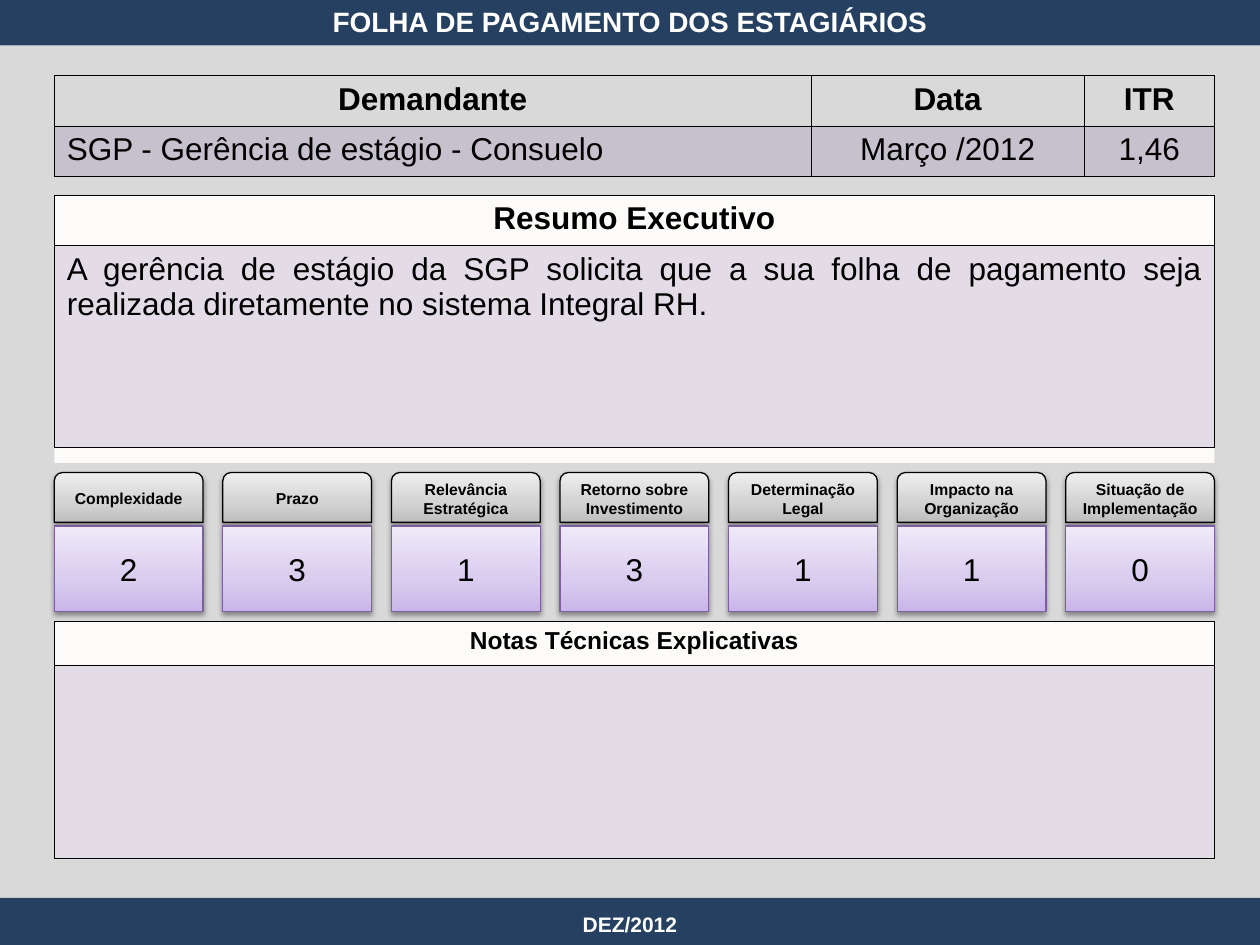
from dataclasses import dataclass
from lxml.etree import SubElement
from pptx import Presentation
from pptx.dml.color import RGBColor
from pptx.enum.shapes import MSO_SHAPE
from pptx.enum.text import MSO_ANCHOR, PP_ALIGN
from pptx.oxml import parse_xml
from pptx.oxml.ns import nsdecls, qn
from pptx.util import Pt


@dataclass(frozen=True)
class Theme:
    font: str = "Arial"
    ink: str = "000000"
    light: str = "FFFFFF"
    backdrop: str = "D9D9D9"
    band: str = "254061"
    panel: str = "FCFBF9"
    tint: str = "8064A2"
    tint_opacity: int = 20
    score_line: str = "7D60A0"
    label_fade: tuple = ((0, "BDBDBD"), (35, "D1D1D1"), (100, "EEEEEE"))
    score_fade: tuple = ((0, "C9B5E8"), (35, "D8CBEE"), (100, "F0EAF9"))
    title_size: int = 16
    footer_size: int = 12
    body_size: int = 18
    subhead_size: int = 14
    label_size: int = 9


THEME = Theme()
CENTER, LEFT, JUSTIFY = PP_ALIGN.CENTER, PP_ALIGN.LEFT, PP_ALIGN.JUSTIFY

TITLE = "FOLHA DE PAGAMENTO DOS ESTAGIÁRIOS"
FOOTER = "DEZ/2012"
REQUEST = [
    ["Demandante", "Data", "ITR"],
    ["SGP - Gerência de estágio - Consuelo", "Março /2012", "1,46"],
]
SUMMARY = [
    ["Resumo Executivo"],
    ["A gerência de estágio da SGP solicita que a sua folha de pagamento seja "
     "realizada diretamente no sistema Integral RH."],
]
REMARKS = [["Notas Técnicas Explicativas"], [""]]
SCORES = [
    ("Complexidade", "2"),
    ("Prazo", "3"),
    ("Relevância Estratégica", "1"),
    ("Retorno sobre Investimento", "3"),
    ("Determinação Legal", "1"),
    ("Impacto na Organização", "1"),
    ("Situação de Implementação", "0"),
]

PAGE_WIDTH, PAGE_HEIGHT = 720, 540
MARGIN, CONTENT_WIDTH = 31, 663
CARD_WIDTH = 85
CARD_STEP = (CONTENT_WIDTH - CARD_WIDTH) / (len(SCORES) - 1)


def add_shadow(parent):
    effects = parse_xml(
        f'<a:effectLst {nsdecls("a")}>'
        '<a:outerShdw blurRad="39370" dist="20320" dir="5400000" rotWithShape="0">'
        f'<a:srgbClr val="{THEME.ink}"><a:alpha val="38000"/></a:srgbClr>'
        '</a:outerShdw></a:effectLst>')
    parent.append(effects)


def write(frame, text, size=THEME.body_size, color=THEME.ink, bold=False,
          align=CENTER, shadow=False):
    frame.word_wrap = True
    para = frame.paragraphs[0]
    para.alignment = align
    if not text:
        return
    span = para.add_run()
    span.text = text
    span.font.size = Pt(size)
    span.font.bold = bold
    span.font.color.rgb = RGBColor.from_string(color)
    if shadow:
        add_shadow(span._r.get_or_add_rPr())
    span.font.name = THEME.font


def add_block(page, top, height, color, left=0, width=PAGE_WIDTH):
    block = page.shapes.add_shape(
        MSO_SHAPE.RECTANGLE, Pt(left), Pt(top), Pt(width), Pt(height))
    block.shadow.inherit = False
    block.fill.solid()
    block.fill.fore_color.rgb = RGBColor.from_string(color)
    block.line.fill.background()


def add_caption(page, text, top, height, size):
    box = page.shapes.add_textbox(Pt(0), Pt(top), Pt(PAGE_WIDTH), Pt(height))
    box.text_frame.vertical_anchor = MSO_ANCHOR.MIDDLE
    write(box.text_frame, text, size=size, color=THEME.light, bold=True, shadow=True)


def add_card(page, preset, left, top, height, fade, line, text, **text_format):
    card = page.shapes.add_shape(
        preset, Pt(left), Pt(top), Pt(CARD_WIDTH), Pt(height))
    card.line.color.rgb = RGBColor.from_string(line)
    card.line.width = Pt(0.75)
    stops = "".join(
        f'<a:gs pos="{position * 1000}"><a:srgbClr val="{color}"/></a:gs>'
        for position, color in fade)
    properties = card.element.spPr
    properties.find(qn("a:prstGeom")).addnext(parse_xml(
        f'<a:gradFill {nsdecls("a")} rotWithShape="1"><a:gsLst>{stops}</a:gsLst>'
        '<a:lin ang="16200000" scaled="0"/></a:gradFill>'))
    add_shadow(properties)
    card.text_frame.vertical_anchor = MSO_ANCHOR.MIDDLE
    write(card.text_frame, text, **text_format)


def style_cell(cell, tinted):
    properties = cell._tc.get_or_add_tcPr()
    if tinted:
        cell.fill.solid()
        cell.fill.fore_color.rgb = RGBColor.from_string(THEME.tint)
        color = properties.find(qn("a:solidFill")).find(qn("a:srgbClr"))
        SubElement(color, qn("a:alpha")).set("val", str(THEME.tint_opacity * 1000))
    else:
        cell.fill.background()
    for index, side in enumerate(("lnL", "lnR", "lnT", "lnB")):
        properties.insert(index, parse_xml(
            f'<a:{side} {nsdecls("a")} w="3175"><a:solidFill>'
            f'<a:srgbClr val="{THEME.ink}"/></a:solidFill></a:{side}>'))


def add_grid(page, rows, top, widths, heights, header_size, body_aligns):
    frame = page.shapes.add_table(
        len(rows), len(widths), Pt(MARGIN), Pt(top), Pt(sum(widths)), Pt(sum(heights)))
    table = frame.table
    table.first_row = table.horz_banding = False
    for column, width in zip(table.columns, widths):
        column.width = Pt(width)
    for r, (texts, height) in enumerate(zip(rows, heights)):
        table.rows[r].height = Pt(height)
        header = r == 0
        for c, text in enumerate(texts):
            cell = table.cell(r, c)
            style_cell(cell, tinted=not header)
            write(cell.text_frame, text, bold=header,
                  size=header_size if header else THEME.body_size,
                  align=CENTER if header else body_aligns[c])


def main():
    deck = Presentation()
    deck.slide_width, deck.slide_height = Pt(PAGE_WIDTH), Pt(PAGE_HEIGHT)
    page = deck.slides.add_slide(deck.slide_layouts[6])

    add_block(page, 26, 493, THEME.backdrop)
    add_block(page, 513, 27, THEME.band)
    add_block(page, -0.5, 26.5, THEME.band)
    add_caption(page, FOOTER, 514, 28, THEME.footer_size)
    add_caption(page, TITLE, -8, 40, THEME.title_size)

    add_grid(page, REQUEST, 43, (432.5, 156, 74.5), (28.5, 28.5),
             THEME.body_size, (LEFT, CENTER, CENTER))
    for rows, top, heights, panel_height, size in (
            (SUMMARY, 111.5, (27, 115), 153, THEME.body_size),
            (REMARKS, 355, (25, 110.5), 136, THEME.subhead_size)):
        add_block(page, top, panel_height, THEME.panel, MARGIN, CONTENT_WIDTH)
        add_grid(page, rows, top, (CONTENT_WIDTH,), heights, size, (JUSTIFY,))

    for index, (label, score) in enumerate(SCORES):
        left = round(MARGIN + index * CARD_STEP, 2)
        add_card(page, MSO_SHAPE.ROUND_2_SAME_RECTANGLE, left, 270, 28.5,
                 THEME.label_fade, THEME.ink, label, size=THEME.label_size, bold=True)
        add_card(page, MSO_SHAPE.RECTANGLE, left, 300.5, 49,
                 THEME.score_fade, THEME.score_line, score)

    deck.save("out.pptx")


if __name__ == "__main__":
    main()
